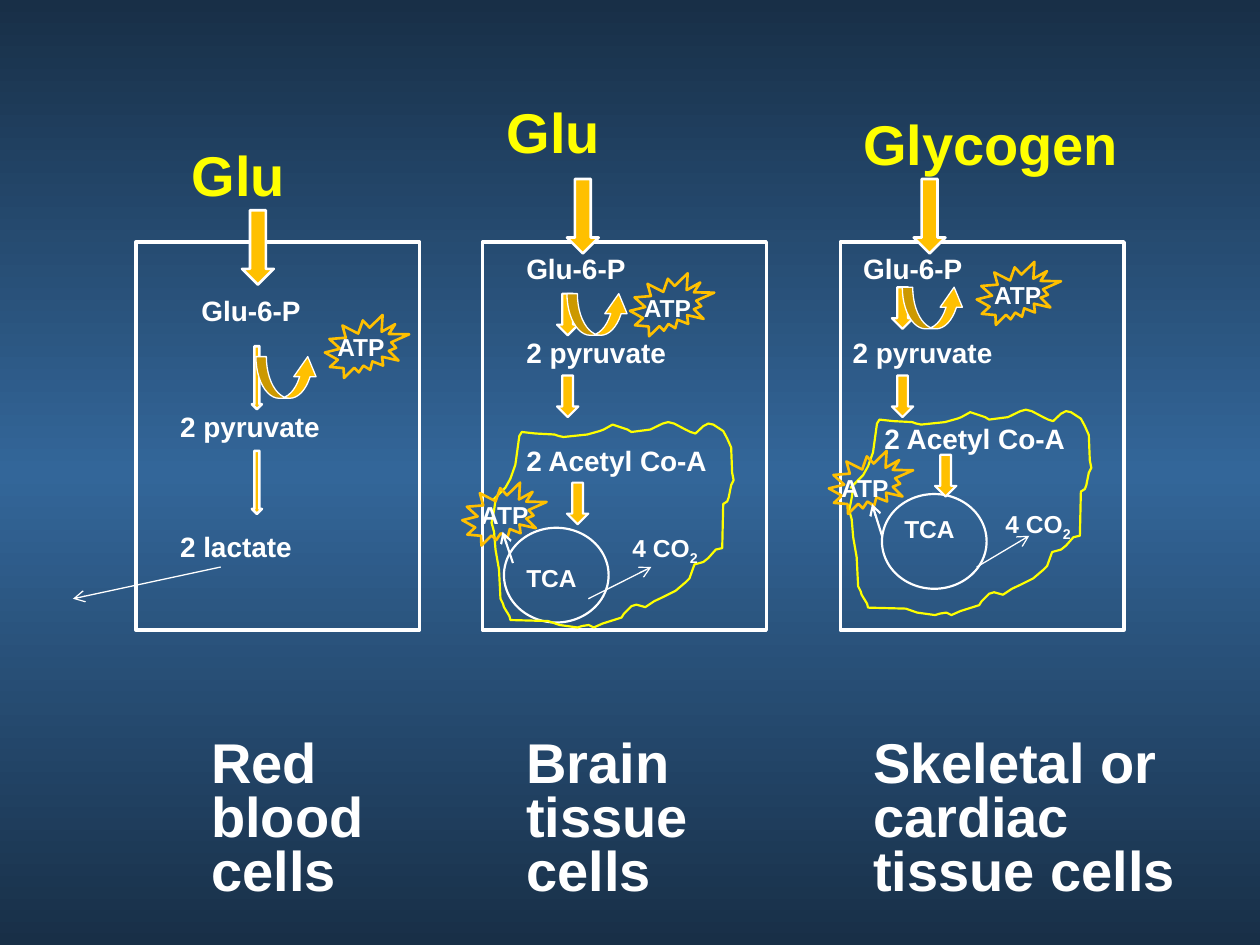
from copy import deepcopy

from lxml.etree import SubElement
from pptx import Presentation
from pptx.dml.color import RGBColor
from pptx.enum.shapes import MSO_CONNECTOR, MSO_SHAPE as Preset
from pptx.enum.text import MSO_AUTO_SIZE
from pptx.oxml.ns import qn
from pptx.util import Cm, Pt

COLORS = {"white": "FFFFFF", "yellow": "FFFF00", "amber": "FFC000",
          "dusk": "182F47", "blue": "336699"}
BIG_ARROW, SMALL_ARROW, THIN_ARROW = (0.64, 1.5), (0.43, 0.84), (0.2, 1.27)
MITOCHONDRION = [
    (0.03, 1.57), (0.2, 1.4), (0.28, 1.32), (0.38, 1.14), (0.48, 0.86), (0.56, 0.28),
    (0.61, 0.2), (0.89, 0.23), (1.27, 0.25), (1.35, 0.28), (1.45, 0.3), (1.93, 0.25),
    (2.18, 0.18), (2.26, 0.15), (2.44, 0.05), (2.74, 0.15), (2.82, 0.2), (3.2, 0.15),
    (3.45, 0.03), (3.56, 0), (3.68, 0.03), (3.91, 0.15), (4.01, 0.2), (4.11, 0.23),
    (4.27, 0.08), (4.37, 0.03), (4.47, 0.05), (4.67, 0.18), (4.75, 0.33), (4.83, 0.51),
    (4.85, 1.02), (4.88, 1.17), (4.83, 1.27), (4.78, 1.52), (4.75, 1.6), (4.67, 1.65),
    (4.65, 2.54), (4.52, 2.57), (4.37, 2.74), (4.27, 2.82), (4.09, 2.87), (3.99, 3.15),
    (3.91, 3.23), (3.71, 3.4), (3.45, 3.53), (3.28, 3.61), (3.1, 3.73), (2.92, 3.68),
    (2.82, 3.71), (2.67, 3.86), (2.62, 3.94), (2.24, 4.06), (2.06, 4.14), (1.96, 4.09),
    (1.83, 4.11), (1.73, 4.14), (1.37, 4.09), (1.14, 4.01), (0.38, 3.99), (0.36, 3.91),
    (0.25, 3.73), (0.23, 3.66), (0.18, 3.56), (0.15, 2.97), (0.08, 2.57), (0.05, 2.21),
    (0, 2.03), (0.03, 1.88), (0.05, 1.78), (0.08, 1.57)]


def rgb(color):
    """Look up a named colour."""
    return RGBColor.from_string(COLORS[color])


def paint_background(slide):
    """Shade the background dark, blue, dark from top to bottom."""
    fill = slide.background.fill
    fill.gradient()
    fill.gradient_angle = 90
    stop_list = slide.element.find(".//" + qn("a:gsLst"))
    stop_list.append(deepcopy(stop_list[0]))
    for stop, color, position in zip(fill.gradient_stops, ("dusk", "blue", "dusk"), (0, 0.5, 1)):
        stop.color.rgb = rgb(color)
        stop.position = position


def style(shape, line, weight, fill=None):
    """Set outline and fill, and drop the shadow."""
    shape.shadow.inherit = False
    shape.line.color.rgb = rgb(line)
    shape.line.width = Pt(weight)
    if fill:
        shape.fill.solid()
        shape.fill.fore_color.rgb = rgb(fill)
    else:
        shape.fill.background()
    return shape


def add_preset(cell, preset, place, size, line="white", weight=1.25, fill=None):
    """Add a preset shape to a cell diagram."""
    shape = cell.shapes.add_shape(preset, *map(Cm, place + size))
    return style(shape, line, weight, fill)


def add_label(cell, text, place, size, points=16, color="white", subscript=""):
    """Add bold text with tight line spacing."""
    label = cell.shapes.add_textbox(*map(Cm, place + size))
    frame = label.text_frame
    frame.word_wrap = True
    frame.auto_size = MSO_AUTO_SIZE.SHAPE_TO_FIT_TEXT
    paragraph = frame.paragraphs[0]
    paragraph.line_spacing = 0.8
    before = SubElement(paragraph._p.get_or_add_pPr(), qn("a:spcBef"))
    SubElement(before, qn("a:spcPct")).set("val", "50000")
    for part in filter(None, (text, subscript)):
        run = paragraph.add_run()
        run.text = part
        run.font.name = "Arial"
        run.font.size = Pt(points)
        run.font.bold = True
        run.font.color.rgb = rgb(color)
    if subscript:
        run._r.get_or_add_rPr().set("baseline", "-25000")


def add_step(cell, place, size=SMALL_ARROW, weight=1.25):
    """Add a downward reaction arrow."""
    add_preset(cell, Preset.DOWN_ARROW, place, size, weight=weight, fill="amber")


def add_byproduct_turn(cell, place):
    """Add the curved arrow that leads to ATP."""
    turn = add_preset(cell, Preset.CURVED_UP_ARROW, place, (1.27, 0.84), weight=0.75, fill="amber")
    for index, value in enumerate((0.25, 0.534, 0.481)):
        turn.adjustments[index] = value


def add_atp(cell, burst_place, text_place):
    """Add an ATP burst and its text."""
    add_preset(cell, Preset.EXPLOSION2, burst_place, (1.7, 1.27), "amber", 1.5)
    add_label(cell, "ATP", text_place, (1.47, 0.74), 14)


def add_release(cell, start, end, weight=0.75):
    """Add a thin line with an open arrowhead."""
    release = cell.shapes.add_connector(MSO_CONNECTOR.STRAIGHT, *map(Cm, start + end))
    release.line.color.rgb = rgb("white")
    release.line.width = Pt(weight)
    SubElement(release.line._get_or_add_ln(), qn("a:tailEnd")).set("type", "arrow")
    SubElement(release._element.spPr, qn("a:effectLst"))


def add_mitochondrion(cell, left, top):
    """Draw the wavy mitochondrion outline."""
    points = [(Cm(left + x), Cm(top + y)) for x, y in MITOCHONDRION]
    builder = cell.shapes.build_freeform(*points[0])
    builder.add_line_segments(points[1:], close=True)
    style(builder.convert_to_shape(), "yellow", 1.25)


def add_cell(slide, left, fuel, fuel_place, fuel_width, name, name_left, name_width, entry):
    """Start a cell diagram with its frame, fuel, entry arrow and name."""
    cell = slide.shapes.add_group_shape()
    add_preset(cell, Preset.RECTANGLE, (left, 4.88), (5.72, 7.82), weight=2)
    add_label(cell, name, (name_left, 14.81), (name_width, 3.53), 32)
    add_label(cell, fuel, fuel_place, (fuel_width, 1.35), 32, "yellow")
    add_step(cell, entry, BIG_ARROW, 1.5)
    return cell


def add_glycolysis(cell, glucose, pyruvate, turn, burst, atp):
    """Add the stage from Glu-6-P to pyruvate with its ATP."""
    add_label(cell, "Glu-6-P", glucose, (3.18, 0.81))
    add_label(cell, "2 pyruvate", pyruvate, (4.45, 0.81))
    add_byproduct_turn(cell, turn)
    add_atp(cell, burst, atp)


def add_respiration(cell, outline, acetyl, cycle, tca, carbon, burst, atp, steps, releases):
    """Add the mitochondrial stage from Acetyl Co-A through the TCA cycle."""
    add_preset(cell, Preset.OVAL, cycle, (2.11, 1.91))
    for step in steps:
        add_step(cell, step)
    add_mitochondrion(cell, *outline)
    add_label(cell, "2 Acetyl Co-A", acetyl, (4.88, 0.81))
    add_label(cell, "TCA", tca, (1.7, 0.74), 14)
    add_label(cell, "4 CO", carbon, (2.34, 0.74), 14, subscript="2")
    add_atp(cell, burst, atp)
    for (start, end), weight in zip(releases, (0.75, 1.25)):
        add_release(cell, start, end, weight)


def main():
    """Build the three cell diagrams and save the slide."""
    deck = Presentation()
    deck.slide_width, deck.slide_height = Cm(25.4), Cm(19.05)
    slide = deck.slides.add_slide(deck.slide_layouts[6])
    paint_background(slide)

    blood = add_cell(slide, 2.74, "Glu", (3.61, 2.97), 2.97,
                     "Red blood cells", 4.01, 3.61, (4.88, 4.24))
    for top in (6.98, 9.09):
        add_step(blood, (5.08, top), THIN_ARROW, 1.5)
    add_glycolysis(blood, (3.81, 5.92), (3.38, 8.26), (5.16, 7.19), (6.55, 6.35), (6.55, 6.68))
    add_label(blood, "2 lactate", (3.38, 10.69), (4.45, 0.81))
    add_release(blood, (4.45, 11.43), (1.47, 12.07))

    brain = add_cell(slide, 9.73, "Glu", (9.96, 2.11), 2.97,
                     "Brain tissue cells", 10.36, 4.01, (11.43, 3.61))
    add_step(brain, (11.23, 5.92))
    add_glycolysis(brain, (10.36, 5.08), (10.36, 6.78), (11.43, 5.92), (12.7, 5.51), (12.73, 5.89))
    add_respiration(brain, outline=(9.91, 8.51), acetyl=(10.36, 8.94), cycle=(10.16, 10.64),
                    tca=(10.36, 11.33), carbon=(12.5, 10.69), burst=(9.32, 9.73),
                    atp=(9.45, 10.06), steps=[(11.23, 7.57), (11.43, 9.73)],
                    releases=[((11.86, 12.07), (13.13, 11.43)), ((10.34, 11.35), (10.13, 10.72))])

    muscle = add_cell(slide, 16.94, "Glycogen", (17.15, 2.34), 6.15,
                      "Skeletal or cardiac tissue cells", 17.35, 6.78, (18.42, 3.61))
    add_step(muscle, (17.98, 5.79))
    add_glycolysis(muscle, (17.15, 5.08), (16.94, 6.78), (18.19, 5.79), (19.69, 5.28), (19.79, 5.64))
    add_respiration(muscle, outline=(17.12, 8.26), acetyl=(17.58, 8.51), cycle=(17.78, 9.96),
                    tca=(17.98, 10.36), carbon=(20.02, 10.19), burst=(16.71, 9.09),
                    atp=(16.71, 9.53), steps=[(17.98, 7.57), (18.85, 9.17)],
                    releases=[((19.69, 11.43), (20.75, 10.8)), ((17.78, 10.8), (17.58, 10.16))])
    deck.save("out.pptx")


if __name__ == "__main__":
    main()
